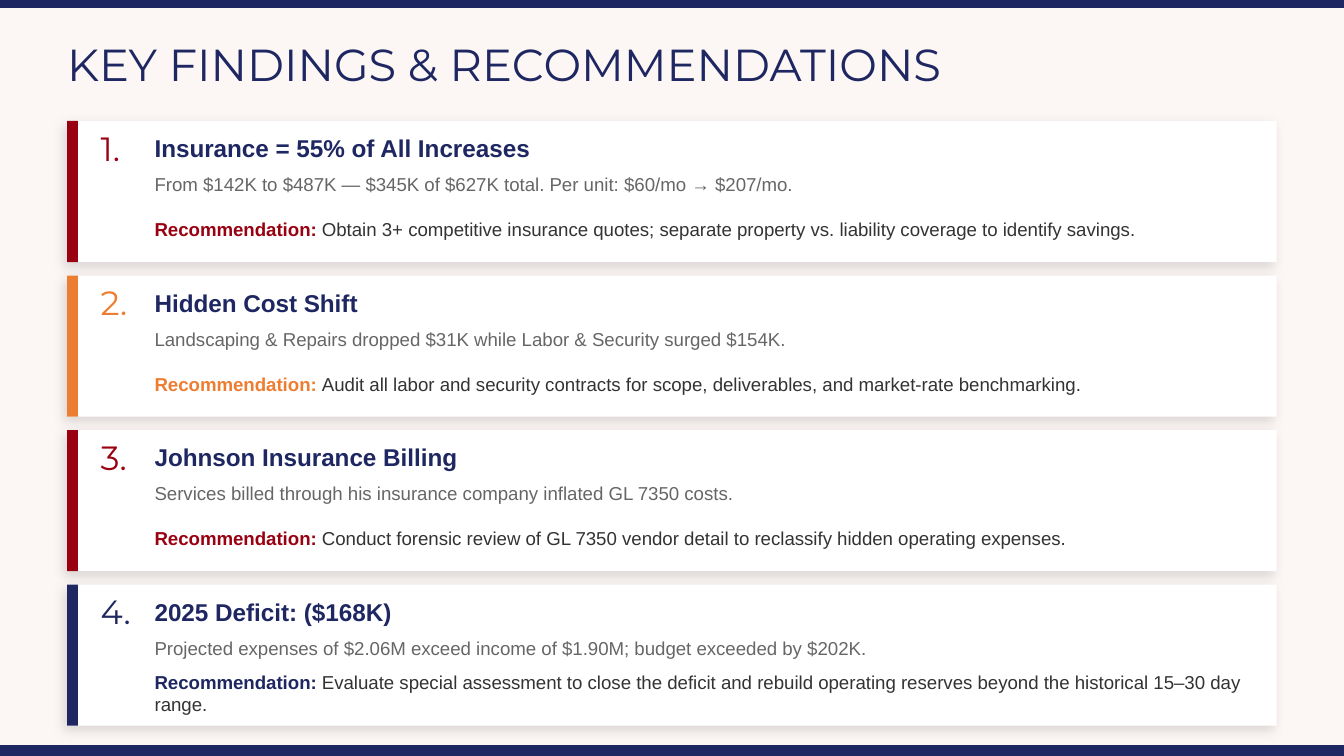
import dataclasses

import lxml.etree
import pptx
import pptx.dml.color
import pptx.enum.shapes
import pptx.enum.text
import pptx.oxml.ns
import pptx.util

Inches = pptx.util.Inches

NAVY, RED, ORANGE = "1E2761", "990011", "ED7D31"
WHITE, CREAM, GREY, DARK = "FFFFFF", "FCF6F5", "666666", "333333"
HEADING_FONT, BODY_FONT = "Montserrat", "Arial"

PAGE_WIDTH = 10
PAGE_HEIGHT = PAGE_WIDTH * 9 / 16
MARGIN = 0.5
CARD_WIDTH, CARD_HEIGHT = 9, 1.05
FIRST_CARD_TOP, CARD_STEP = 0.9, 1.15
TEXT_LEFT, TEXT_WIDTH = 1.15, 8.15


@dataclasses.dataclass
class Finding:
    title: str
    detail: str
    recommendation: str
    accent: str


FINDINGS = [
    Finding(
        "Insurance = 55% of All Increases",
        "From $142K to $487K — $345K of $627K total. Per unit: $60/mo → $207/mo.",
        "Obtain 3+ competitive insurance quotes; separate property vs. liability "
        "coverage to identify savings.",
        RED,
    ),
    Finding(
        "Hidden Cost Shift",
        "Landscaping & Repairs dropped $31K while Labor & Security surged $154K.",
        "Audit all labor and security contracts for scope, deliverables, and "
        "market-rate benchmarking.",
        ORANGE,
    ),
    Finding(
        "Johnson Insurance Billing",
        "Services billed through his insurance company inflated GL 7350 costs.",
        "Conduct forensic review of GL 7350 vendor detail to reclassify hidden "
        "operating expenses.",
        RED,
    ),
    Finding(
        "2025 Deficit: ($168K)",
        "Projected expenses of $2.06M exceed income of $1.90M; budget exceeded by $202K.",
        "Evaluate special assessment to close the deficit and rebuild operating "
        "reserves beyond the historical 15–30 day range.",
        NAVY,
    ),
]


def set_color(target, color: str) -> None:
    """Colour a fill or a font."""
    if hasattr(target, "solid"):
        target.solid()
        target.fore_color.rgb = pptx.dml.color.RGBColor.from_string(color)
    else:
        target.color.rgb = pptx.dml.color.RGBColor.from_string(color)


def add_shadow(shape) -> None:
    """Give a shape a soft shadow falling to the lower left."""
    effects = shape._element.spPr.find(pptx.oxml.ns.qn("a:effectLst"))
    shadow = lxml.etree.SubElement(
        effects,
        pptx.oxml.ns.qn("a:outerShdw"),
        blurRad=str(pptx.util.Pt(6)),
        dist=str(pptx.util.Pt(3)),
        dir=str(135 * 60000),
        algn="bl",
        rotWithShape="0",
    )
    color = lxml.etree.SubElement(shadow, pptx.oxml.ns.qn("a:srgbClr"), val="000000")
    lxml.etree.SubElement(color, pptx.oxml.ns.qn("a:alpha"), val="12000")


def add_bar(page, left: float, top: float, width: float, height: float, color: str):
    bar = page.shapes.add_shape(
        pptx.enum.shapes.MSO_SHAPE.RECTANGLE,
        Inches(left), Inches(top), Inches(width), Inches(height),
    )
    bar.shadow.inherit = False
    set_color(bar.fill, color)
    bar.line.fill.background()
    return bar


def add_span(para, text: str, *, size: float, color: str,
             font: str = BODY_FONT, bold: bool = False) -> None:
    span = para.add_run()
    span.text = text
    span.font.name = font
    span.font.size = pptx.util.Pt(size)
    span.font.bold = bold
    set_color(span.font, color)


def format_frame(box):
    """Remove insets, centre vertically and return the first paragraph."""
    frame = box.text_frame
    frame.auto_size = pptx.enum.text.MSO_AUTO_SIZE.NONE
    frame.word_wrap = True
    frame.margin_left = frame.margin_right = 0
    frame.margin_top = frame.margin_bottom = 0
    frame.vertical_anchor = pptx.enum.text.MSO_ANCHOR.MIDDLE
    para = frame.paragraphs[0]
    para.alignment = pptx.enum.text.PP_ALIGN.LEFT
    return para


def add_box(page, left: float, top: float, width: float, height: float):
    box = page.shapes.add_textbox(
        Inches(left), Inches(top), Inches(width), Inches(height)
    )
    return format_frame(box)


def add_title(page, text: str) -> None:
    box = page.shapes.title
    box.left, box.top = Inches(MARGIN), Inches(0.2)
    box.width, box.height = Inches(CARD_WIDTH), Inches(0.55)
    add_span(format_frame(box), text, size=24, color=NAVY, font=HEADING_FONT)


def add_card(page, number: int, finding: Finding) -> None:
    top = FIRST_CARD_TOP + (number - 1) * CARD_STEP

    # Panel with its accent edge
    add_shadow(add_bar(page, MARGIN, top, CARD_WIDTH, CARD_HEIGHT, WHITE))
    add_bar(page, MARGIN, top, 0.08, CARD_HEIGHT, finding.accent)

    # Number, heading and detail
    para = add_box(page, 0.75, top + 0.05, 0.4, 0.3)
    add_span(para, f"{number}.", size=18, color=finding.accent, font=HEADING_FONT)
    para = add_box(page, TEXT_LEFT, top + 0.05, TEXT_WIDTH, 0.3)
    add_span(para, finding.title, size=13, color=NAVY, bold=True)
    para = add_box(page, TEXT_LEFT, top + 0.33, TEXT_WIDTH, 0.28)
    add_span(para, finding.detail, size=10, color=GREY)

    # Recommendation
    para = add_box(page, TEXT_LEFT, top + 0.63, TEXT_WIDTH, 0.35)
    add_span(para, "Recommendation: ", size=10, color=finding.accent, bold=True)
    add_span(para, finding.recommendation, size=10, color=DARK)


def main() -> None:
    deck = pptx.Presentation()
    deck.slide_width, deck.slide_height = Inches(PAGE_WIDTH), Inches(PAGE_HEIGHT)
    page = deck.slides.add_slide(deck.slide_layouts.get_by_name("Title Only"))
    set_color(page.background.fill, CREAM)

    # Top band and title
    add_bar(page, 0, 0, PAGE_WIDTH, 0.06, NAVY)
    add_title(page, "KEY FINDINGS & RECOMMENDATIONS")

    # Finding cards
    for number, finding in enumerate(FINDINGS, start=1):
        add_card(page, number, finding)

    # Bottom band
    add_bar(page, 0, PAGE_HEIGHT - 0.08, PAGE_WIDTH, 0.08, NAVY)

    deck.save("out.pptx")


if __name__ == "__main__":
    main()
